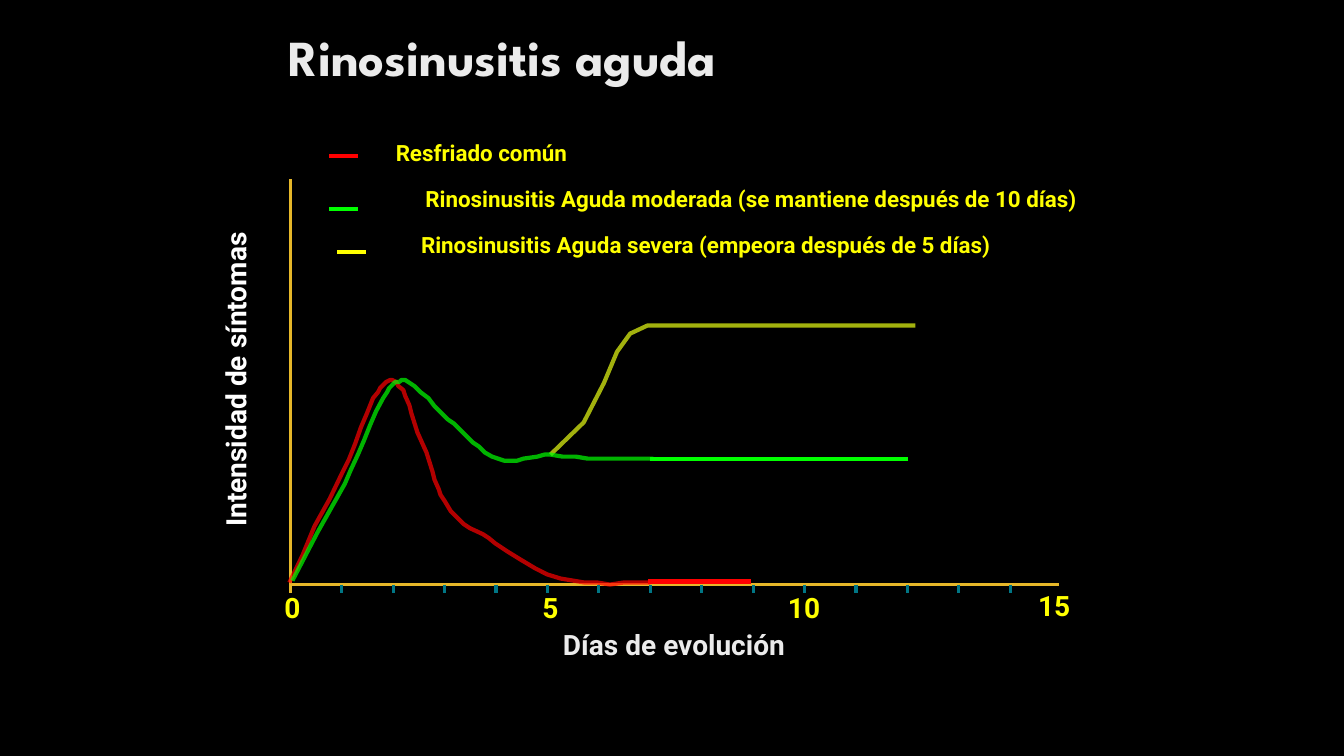
from itertools import pairwise

from lxml import etree
from pptx import Presentation
from pptx.dml.color import RGBColor
from pptx.enum.shapes import MSO_CONNECTOR
from pptx.enum.text import MSO_ANCHOR, PP_ALIGN
from pptx.oxml.ns import qn
from pptx.util import Inches, Pt

STRAIGHT = MSO_CONNECTOR.STRAIGHT
MIDDLE = MSO_ANCHOR.MIDDLE
LEFT, CENTER = PP_ALIGN.LEFT, PP_ALIGN.CENTER

COLORS = {
    "background": "000000",
    "axis": "E6B729",
    "tick": "007685",
    "cold": "FF0000",
    "moderate": "00FF00",
    "severe": "E7FD15",
    "yellow": "FFFF00",
    "light": "EBEBEB",
    "white": "FFFFFF",
}

ORIGIN_X, AXIS_Y, DAY_WIDTH = 2.88, 5.8, 0.51
TICK_BOTTOM = 5.88

SEVERE_CURVE = [
    (5.46, 4.51), (5.79, 4.19), (5.99, 3.8), (6.12, 3.49), (6.25, 3.31),
    (6.42, 3.23), (6.58, 3.23), (8, 3.23), (9.08, 3.23),
]
COLD_CURVE = [
    (2.87, 5.78), (3, 5.51), (3.12, 5.22), (3.27, 4.95), (3.39, 4.7),
    (3.46, 4.56), (3.52, 4.41), (3.58, 4.24), (3.64, 4.1), (3.7, 3.95),
    (3.75, 3.89), (3.77, 3.85), (3.81, 3.81), (3.83, 3.79), (3.87, 3.77),
    (3.89, 3.77), (3.93, 3.79), (3.95, 3.83), (4, 3.87), (4.02, 3.93),
    (4.06, 4.02), (4.08, 4.1), (4.14, 4.29), (4.23, 4.49), (4.29, 4.68),
    (4.31, 4.76), (4.35, 4.85), (4.37, 4.91), (4.41, 4.97), (4.47, 5.07),
    (4.54, 5.14), (4.6, 5.2), (4.66, 5.24), (4.79, 5.3), (4.85, 5.34),
    (4.91, 5.39), (5.03, 5.47), (5.16, 5.55), (5.31, 5.64), (5.43, 5.7),
    (5.56, 5.74), (5.68, 5.76), (5.8, 5.78), (5.93, 5.78), (6.05, 5.8),
    (6.18, 5.78), (6.45, 5.78),
]
MODERATE_CURVE = [
    (2.9, 5.76), (3.15, 5.28), (3.42, 4.8), (3.48, 4.66), (3.55, 4.51),
    (3.61, 4.37), (3.67, 4.22), (3.73, 4.08), (3.8, 3.95), (3.84, 3.89),
    (3.86, 3.85), (3.9, 3.81), (3.92, 3.79), (3.96, 3.79), (3.98, 3.77),
    (4.02, 3.77), (4.05, 3.79), (4.11, 3.83), (4.17, 3.89), (4.25, 3.95),
    (4.31, 4.03), (4.38, 4.1), (4.44, 4.16), (4.5, 4.2), (4.56, 4.26),
    (4.69, 4.39), (4.75, 4.43), (4.81, 4.49), (4.88, 4.53), (4.94, 4.55),
    (5, 4.57), (5.06, 4.57), (5.13, 4.57), (5.19, 4.55), (5.33, 4.53),
    (5.4, 4.51), (5.46, 4.51), (5.58, 4.53), (5.71, 4.53), (5.83, 4.55),
    (5.96, 4.55), (6.21, 4.55), (6.48, 4.55),
]

deck = Presentation()
deck.slide_width, deck.slide_height = Inches(13.33), Inches(7.5)
page = deck.slides.add_slide(deck.slide_layouts[6])
page.background.fill.solid()
page.background.fill.fore_color.rgb = RGBColor.from_string(COLORS["background"])


def add_path(points, color, width, opacity=100):
    """Draw two points as a connector, more points as an open outline."""
    places = [(Inches(x), Inches(y)) for x, y in points]
    if len(places) == 2:
        shape = page.shapes.add_connector(STRAIGHT, *places[0], *places[1])
        etree.SubElement(shape._element.spPr, qn("a:effectLst"))
    else:
        builder = page.shapes.build_freeform(*places[0])
        builder.add_line_segments(places[1:], close=False)
        shape = builder.convert_to_shape()
        shape.shadow.inherit = False
        shape.fill.background()
    shape.line.color.rgb = RGBColor.from_string(COLORS[color])
    shape.line.width = Pt(width)
    if opacity < 100:
        tint = shape.line._ln.find(".//" + qn("a:srgbClr"))
        etree.SubElement(tint, qn("a:alpha")).set("val", str(opacity * 1000))


def add_text(text, place, size, color, font="Roboto", align=CENTER, wrap=False):
    box = page.shapes.add_textbox(*(Inches(length) for length in place))
    frame = box.text_frame
    frame.margin_left = frame.margin_right = 0
    frame.margin_top = frame.margin_bottom = 0
    frame.word_wrap = wrap
    frame.text = text
    para = frame.paragraphs[0]
    para.alignment = align
    span = para.runs[0]
    span.font.name = font
    span.font.size = Pt(size)
    span.font.bold = True
    span.font.color.rgb = RGBColor.from_string(COLORS[color])
    return box


add_path(SEVERE_CURVE, "severe", 3, opacity=70)

# Axes, day ticks and their labels
add_path([(10.5, AXIS_Y), (ORIGIN_X, AXIS_Y), (ORIGIN_X, TICK_BOTTOM)], "axis", 2.25)
for day in range(1, 15):
    x = ORIGIN_X + day * DAY_WIDTH
    add_path([(x, AXIS_Y), (x, TICK_BOTTOM)], "tick", 2.25)
for label, left, top, width in [
    ("0", 2.81, 5.86, 0.18),
    ("5", 5.37, 5.86, 0.18),
    ("10", 7.8, 5.86, 0.35),
    ("15", 10.28, 5.84, 0.35),
]:
    add_text(label, (left, top, width, 0.33), 20, "yellow")
add_text("Días de evolución", (5.29, 6.23, 2.79, 0.33), 20, "light", wrap=True)
intensity = add_text("Intensidad de síntomas", (0.69, 3.6, 3.28, 0.33), 20, "white")
intensity.rotation = 270
add_path([(ORIGIN_X, AXIS_Y), (ORIGIN_X, 1.78)], "axis", 2.25)

# Legend
for text, color, line_left, line_y, left, top, width in [
    ("Resfriado común", "cold", 3.26, 1.55, 3.83, 1.38, 1.89),
    ("Rinosinusitis Aguda severa (empeora después de 5 días)",
     "yellow", 3.34, 2.5, 3.81, 2.29, 6.38),
    ("Rinosinusitis Aguda moderada (se mantiene después de 10 días)",
     "moderate", 3.26, 2.07, 3.8, 1.84, 7.3),
]:
    add_path([(line_left + 0.29, line_y), (line_left, line_y)], color, 3)
    add_text(text, (left, top, width, 0.27), 16, "yellow")

# Curves, each followed by its level stretch
for curve, color, level, stops in [
    (COLD_CURVE, "cold", 5.77, [6.43, 6.95, 7.45]),
    (MODERATE_CURVE, "moderate", 4.55, [6.45, 6.97, 7.47, 7.99, 8.49, 9.01]),
]:
    add_path(curve, color, 3, opacity=70)
    for start, end in pairwise(stops):
        add_path([(end, level), (start, level)], color, 3)

title = add_text("Rinosinusitis aguda", (2.86, 0.1, 6.15, 0.92), 36, "light",
                 font="League Spartan", align=LEFT, wrap=True)
title.text_frame.vertical_anchor = MIDDLE

deck.save("out.pptx")
